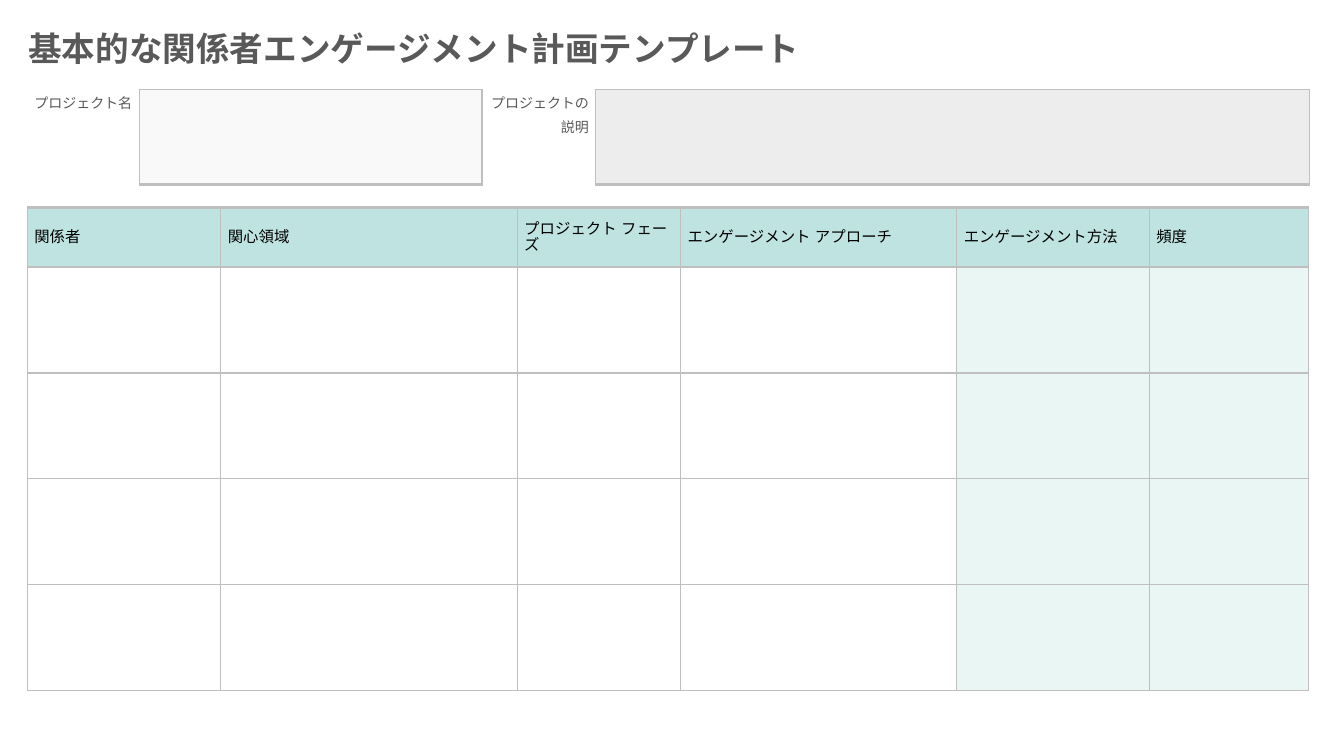
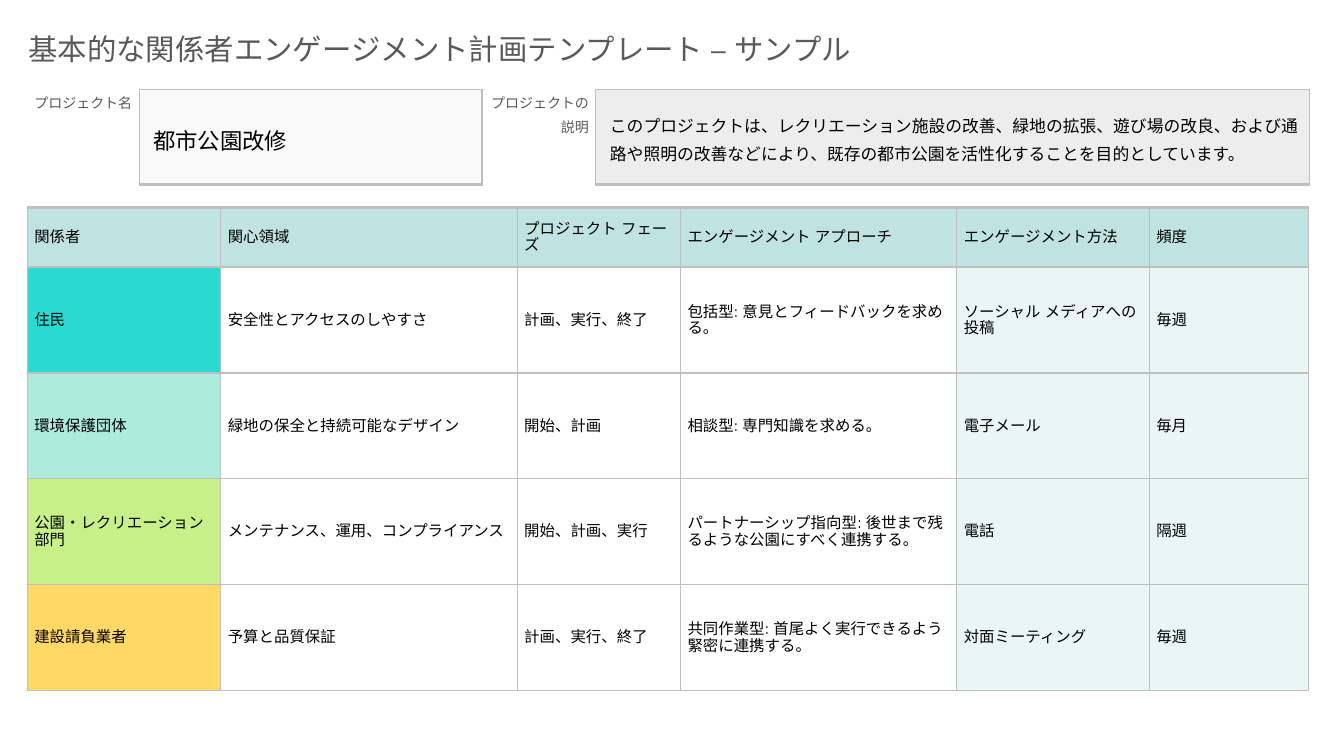
from lxml import etree
from pptx import Presentation
from pptx.dml.color import RGBColor
from pptx.enum.text import MSO_ANCHOR, MSO_AUTO_SIZE, PP_ALIGN
from pptx.oxml.ns import qn
from pptx.util import Inches, Pt

LEFT, RIGHT = PP_ALIGN.LEFT, PP_ALIGN.RIGHT
TOP, MIDDLE = MSO_ANCHOR.TOP, MSO_ANCHOR.MIDDLE
GROW = MSO_AUTO_SIZE.SHAPE_TO_FIT_TEXT

BLACK = RGBColor(0x00, 0x00, 0x00)
WHITE = RGBColor(0xFF, 0xFF, 0xFF)
GRAY_TEXT = RGBColor(0x59, 0x59, 0x59)
BORDER = RGBColor(0xBF, 0xBF, 0xBF)
NAME_FILL = RGBColor(0xF9, 0xF9, 0xF9)
DESCRIPTION_FILL = RGBColor(0xED, 0xED, 0xED)
HEADER_FILL = RGBColor(0xBE, 0xE3, 0xE0)
PALE_TEAL = RGBColor(0xE9, 0xF6, 0xF4)
STAKEHOLDER_FILLS = [
    RGBColor(0x28, 0xDA, 0xCF),
    RGBColor(0xAD, 0xEB, 0xDC),
    RGBColor(0xC8, 0xF0, 0x88),
    RGBColor(0xFF, 0xD9, 0x66),
]
MAIN_FONT = "TeX Gyre Adventor"
FIELD_FONT = "Noto Sans CJK JP"

# Shared layout
COLUMN_WIDTHS = [1.92, 2.94, 1.62, 2.74, 1.91, 1.58]
ROW_HEIGHTS = [0.59] + [1.05] * 4
HEADERS = ["関係者", "関心領域", "プロジェクト フェーズ",
           "エンゲージメント アプローチ", "エンゲージメント方法", "頻度"]
BODY_FILLS = [WHITE] * 4 + [PALE_TEAL] * 2
BOX_BORDERS = {"L": 1, "R": 1, "T": 1, "B": 2.25}
HEADER_BORDERS = {"L": 1, "R": 1, "T": 3, "B": 1}
BODY_BORDERS = {"L": 1, "R": 1, "T": 1, "B": 1}
# Label, left edge, column widths, fill and text size of each project field
FIELDS = [
    ("プロジェクト名", 0.18, [1.2, 3.4], NAME_FILL, 16),
    ("プロジェクトの\n説明", 4.79, [1.12, 7.08], DESCRIPTION_FILL, 12),
]

# Content of each slide
SLIDES = [
    {
        "title": "基本的な関係者エンゲージメント計画テンプレート",
        "title_size": 24, "title_bold": True,
        "title_top": 0.23, "title_height": 0.5,
        "project": ["", ""],
        "rows": [[""] * 6] * 4,
        "stakeholder_fills": [WHITE] * 4,
    },
    {
        "title": "基本的な関係者エンゲージメント計画テンプレート – サンプル",
        "title_size": 21, "title_bold": False,
        "title_top": 0.26, "title_height": 0.45,
        "project": [
            "都市公園改修",
            "このプロジェクトは、レクリエーション施設の改善、緑地の拡張、遊び場の改良、"
            "および通路や照明の改善などにより、既存の都市公園を活性化することを目的としています。",
        ],
        "rows": [
            ["住民", "安全性とアクセスのしやすさ", "計画、実行、終了",
             "包括型: 意見とフィードバックを求める。",
             "ソーシャル メディアへの\n投稿", "毎週"],
            ["環境保護団体", "緑地の保全と持続可能なデザイン", "開始、計画",
             "相談型: 専門知識を求める。", "電子メール", "毎月"],
            ["公園・レクリエーション部門", "メンテナンス、運用、コンプライアンス",
             "開始、計画、実行",
             "パートナーシップ指向型: 後世まで残るような公園にすべく連携する。",
             "電話", "隔週"],
            ["建設請負業者", "予算と品質保証", "計画、実行、終了",
             "共同作業型: 首尾よく実行できるよう\n緊密に連携する。",
             "対面ミーティング", "毎週"],
        ],
        "stakeholder_fills": STAKEHOLDER_FILLS,
    },
]


def write_text(text_frame, text, size=11, font=MAIN_FONT, color=BLACK,
               bold=False, align=LEFT, spacing=1.15):
    paragraph = text_frame.paragraphs[0]
    paragraph.text = text
    paragraph.alignment = align
    paragraph.line_spacing = spacing
    for run in paragraph.runs:
        run.font.size = Pt(size)
        run.font.bold = bold
        run.font.color.rgb = color
        run.font.name = font
        # East Asian characters take their own typeface entry
        properties = run.font._element
        latin = properties.find(qn("a:latin"))
        east_asian = etree.Element(qn("a:ea"), typeface=font)
        latin.addnext(east_asian)
    for line_break in paragraph._p.findall(qn("a:br")):
        etree.SubElement(line_break, qn("a:rPr"), sz=str(size * 100))


def format_cell(cell, text, borders, fill=None, anchor=MIDDLE, indent=0.07, **text_format):
    cell.margin_left, cell.margin_right = Inches(indent), Inches(0.07)
    cell.margin_top = cell.margin_bottom = 0
    cell.vertical_anchor = anchor
    properties = cell._tc.get_or_add_tcPr()
    for side in "LRTB":
        width = borders.get(side, 0)
        line = etree.SubElement(properties, qn(f"a:ln{side}"), w=str(Pt(width)))
        if width:
            solid = etree.SubElement(line, qn("a:solidFill"))
            etree.SubElement(solid, qn("a:srgbClr"), val=str(BORDER))
        else:
            etree.SubElement(line, qn("a:noFill"))
    if fill is None:
        cell.fill.background()
    else:
        cell.fill.solid()
        cell.fill.fore_color.rgb = fill
    if text:
        write_text(cell.text_frame, text, **text_format)


presentation = Presentation()
presentation.slide_width = Inches(13.33)
presentation.slide_height = Inches(7.5)
title_only = presentation.slide_layouts[5]

for content in SLIDES:
    slide = presentation.slides.add_slide(title_only)

    # Title
    title = slide.shapes.title
    title.left, title.top = Inches(0.18), Inches(content["title_top"])
    title.width, title.height = Inches(9.13), Inches(content["title_height"])
    title.text_frame.word_wrap = True
    title.text_frame.auto_size = GROW
    title.text_frame.vertical_anchor = TOP
    write_text(title.text_frame, content["title"], size=content["title_size"],
               color=GRAY_TEXT, bold=content["title_bold"], spacing=1.0)

    # Project name and description, then the plan grid
    tables = []
    grids = [(left, 0.89, widths, [0.94]) for _, left, widths, _, _ in FIELDS]
    grids.append((0.27, 2.06, COLUMN_WIDTHS, ROW_HEIGHTS))
    for left, top, widths, heights in grids:
        table = slide.shapes.add_table(
            len(heights), len(widths), Inches(left), Inches(top),
            Inches(sum(widths)), Inches(sum(heights))).table
        table.first_row = table.horz_banding = False
        for column, width in zip(table.columns, widths):
            column.width = Inches(width)
        for row, height in zip(table.rows, heights):
            row.height = Inches(height)
        tables.append(table)
    *field_tables, plan = tables

    # Project fields
    for table, field, value in zip(field_tables, FIELDS, content["project"]):
        label, _, _, fill, size = field
        format_cell(table.cell(0, 0), label, {"R": 1}, anchor=TOP, size=10,
                    font=FIELD_FONT, color=GRAY_TEXT, align=RIGHT)
        format_cell(table.cell(0, 1), value, BOX_BORDERS, fill, indent=0.14,
                    size=size, font=FIELD_FONT)

    # Engagement plan
    for column, header in enumerate(HEADERS):
        format_cell(plan.cell(0, column), header, HEADER_BORDERS, HEADER_FILL)
    for row, values in enumerate(content["rows"], start=1):
        fills = [content["stakeholder_fills"][row - 1]] + BODY_FILLS[1:]
        for column, (value, fill) in enumerate(zip(values, fills)):
            borders = HEADER_BORDERS | {"T": 1} if row == 1 else BODY_BORDERS
            format_cell(plan.cell(row, column), value, borders, fill)

presentation.save("out.pptx")
